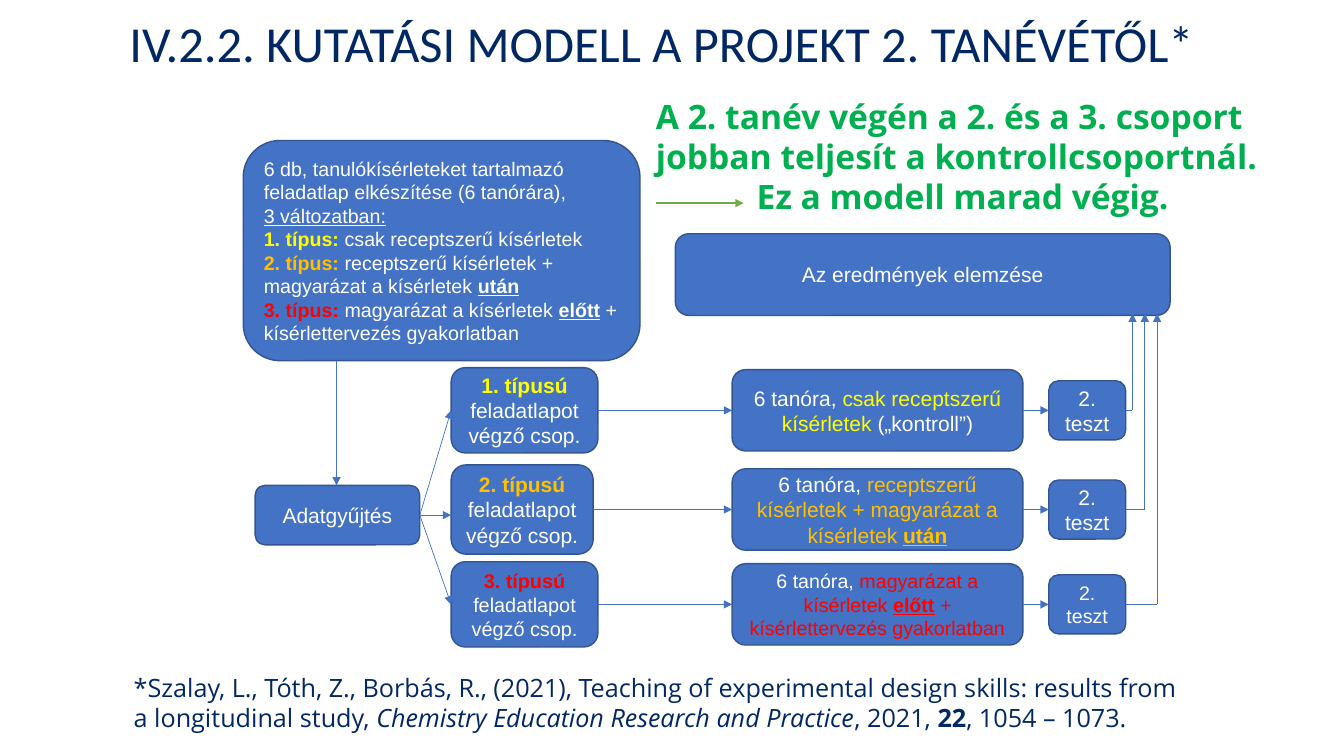
from pptx import Presentation
from pptx.dml.color import RGBColor
from pptx.enum.shapes import MSO_CONNECTOR, MSO_SHAPE
from pptx.enum.text import MSO_ANCHOR, PP_ALIGN
from pptx.oxml.ns import qn
from pptx.util import Cm, Pt
from lxml.etree import SubElement

BLUE, OUTLINE, NAVY, WHITE = "4472C4", "325491", "012863", "FFFFFF"
YELLOW, ORANGE, RED, GREEN = "FFFF00", "FFC000", "FF0000", "00B050"
BOLD = {"bold": True}
STRESSED = {"bold": True, "underline": True}


def rgb(value):
    return RGBColor.from_string(value)


def write(shape, paragraphs, size, color=WHITE, font="Arial",
          align=PP_ALIGN.LEFT, anchor=MSO_ANCHOR.MIDDLE, bold=False):
    """Each paragraph is a list of (text, format changes) pairs."""
    frame = shape.text_frame
    frame.word_wrap = True
    frame.vertical_anchor = anchor
    for i, pieces in enumerate(paragraphs):
        paragraph = frame.add_paragraph() if i else frame.paragraphs[0]
        paragraph.alignment = align
        for text, changes in pieces:
            run = paragraph.add_run()
            run.text = text
            look = run.font
            look.name, look.size = font, Pt(size)
            look.bold = changes.get("bold", bold)
            look.italic = changes.get("italic", False)
            look.underline = changes.get("underline", False)
            look.color.rgb = rgb(changes.get("color", color))


def add_box(slide, box, paragraphs, size=15, align=PP_ALIGN.CENTER):
    shape = slide.shapes.add_shape(MSO_SHAPE.ROUNDED_RECTANGLE, *map(Cm, box))
    shape.shadow.inherit = False
    shape.fill.solid()
    shape.fill.fore_color.rgb = rgb(BLUE)
    shape.line.color.rgb = rgb(OUTLINE)
    shape.line.width = Pt(1)
    write(shape, paragraphs, size, align=align)


def add_label(slide, box, paragraphs, size, **look):
    label = slide.shapes.add_textbox(*map(Cm, box))
    write(label, paragraphs, size, anchor=MSO_ANCHOR.TOP, **look)
    return label


def add_line(slide, start, end, color=BLUE, width=0.5, arrow=True):
    line = slide.shapes.add_connector(
        MSO_CONNECTOR.STRAIGHT, *map(Cm, (*start, *end)))
    line.line.color.rgb = rgb(color)
    line.line.width = Pt(width)
    if arrow:
        SubElement(line.line._get_or_add_ln(), qn("a:tailEnd"), type="triangle")
    SubElement(line._element.spPr, qn("a:effectLst"))


def add_preparation(slide, box):
    """Worksheet design on top, data collection below; returns the way out."""
    left, top, width, height = box
    design_height, collect_height = 5.55, 1.5
    collect_top = top + height - collect_height
    add_box(slide, (left, top, width, design_height), [
        [("6 db, tanulókísérleteket tartalmazó feladatlap elkészítése "
          "(6 tanórára),", {})],
        [("3 változatban:", {"underline": True})],
        [("1. típus: ", {"color": YELLOW, **BOLD}),
         ("csak receptszerű kísérletek", {})],
        [("2. típus: ", {"color": ORANGE, **BOLD}),
         ("receptszerű kísérletek + magyarázat a kísérletek ", {}),
         ("után", STRESSED)],
        [("3. típus: ", {"color": RED, **BOLD}),
         ("magyarázat a kísérletek ", {}), ("előtt", STRESSED),
         (" + kísérlettervezés gyakorlatban", {})],
    ], 14, PP_ALIGN.LEFT)
    add_box(slide, (left + 0.3, collect_top, 4.15, collect_height),
            [[("Adatgyűjtés", {})]])
    add_line(slide, (left + 2.35, top + design_height),
             (left + 2.35, collect_top))
    return left + 4.45, top + height - collect_height / 2


def add_group_row(slide, box, source, result, number, color, lessons,
                  group_size, group_width, lesson_size):
    """Group, lessons and test, joined from the source to the result."""
    left, top, width, height = box
    middle = top + height / 2
    lessons_left, lessons_width, lessons_height = left + 7.08, 7.33, 2.05
    test_width, test_height = 1.94, 1.49
    right = left + width
    test_left = right - test_width

    add_box(slide, (left, top, group_width, height),
            [[(f"{number}. típusú ", {"color": color, **BOLD}),
              ("feladatlapot végző csop.", {})]], group_size)
    add_box(slide, (lessons_left, middle - lessons_height / 2,
                    lessons_width, lessons_height),
            [[("6 tanóra, ", {}), *lessons]], lesson_size)
    add_box(slide, (test_left, middle - test_height / 2,
                    test_width, test_height),
            [[("2. teszt", {})]], lesson_size)

    # The arrow from the source runs level where the group lies beside it
    beside = top < source[1] < top + height
    add_line(slide, source, (left, source[1] if beside else middle))
    add_line(slide, (left + group_width, middle), (lessons_left, middle))
    add_line(slide, (lessons_left + lessons_width, middle),
             (test_left, middle))
    add_line(slide, (right, middle), (result[0], middle), arrow=False)
    add_line(slide, (result[0], middle), result)


def add_conclusion(slide, box):
    left, top, width, height = box
    conclusion = add_label(slide, box, [
        [("A 2. tanév végén a 2. és a 3. csoport jobban teljesít "
          "a kontrollcsoportnál.", {})],
        [("\tEz a modell marad végig.", {})],
    ], 24, color=GREEN, font="Open Sans", bold=True)
    # Tab stop that leaves room for the arrow
    last_line = conclusion.text_frame.paragraphs[-1]._p.get_or_add_pPr()
    stops = SubElement(last_line, qn("a:tabLst"))
    SubElement(stops, qn("a:tab"), pos=str(int(Cm(2.54))), algn="l")
    arrow_y = top + 2.84
    add_line(slide, (left + 0.25, arrow_y), (left + 2.46, arrow_y),
             "70AD47", 1.5)


def add_source_note(slide, box):
    add_label(slide, box, [[
        ("*Szalay, L., Tóth, Z., Borbás, R., (2021), Teaching of experimental "
         "design skills: results from a longitudinal study, ", {}),
        ("Chemistry Education Research and Practice", {"italic": True}),
        (", 2021, ", {}), ("22", BOLD), (", 1054 – 1073.", {}),
    ]], 18, color=NAVY, font="Open Sans")


def main():
    deck = Presentation()
    deck.slide_width, deck.slide_height = Cm(33.87), Cm(19.05)
    slide = deck.slides.add_slide(deck.slide_layouts[6])

    # Title
    add_label(slide, (1.07, 0.18, 31.22, 1.8),
              [[("IV.2.2. KUTATÁSI MODELL A PROJEKT 2. TANÉVÉTŐL*", {})]],
              36, color=NAVY, font="Calibri", align=PP_ALIGN.CENTER)

    # Start and end of the research model
    source = add_preparation(slide, (6.13, 3.54, 10, 10.19))
    add_box(slide, (17.02, 5.89, 12.47, 2.06),
            [[("Az eredmények elemzése", {})]])

    # One row per group: number, colour, lessons, sizes, middle, height
    rows = [
        (1, YELLOW, [("csak receptszerű kísérletek ", {"color": YELLOW}),
                     ("(„kontroll”)", {})], 15, 3.7, 15, 10.34, 2.15),
        (2, ORANGE, [("receptszerű kísérletek + magyarázat a kísérletek ",
                      {"color": ORANGE}),
                     ("után", {"color": ORANGE, **STRESSED})],
         15, 3.58, 15, 12.84, 2.25),
        (3, RED, [("magyarázat a kísérletek ", {"color": RED}),
                  ("előtt", {"color": RED, **STRESSED}),
                  (" + kísérlettervezés gyakorlatban", {"color": RED})],
         14.2, 3.7, 14, 15.23, 2.15),
    ]
    for i, (*content, middle, height) in enumerate(rows):
        add_group_row(slide, (11.37, middle - height / 2, 17, height),
                      source, (28.54 + 0.31 * i, 7.9), *content)

    # Conclusion and reference
    add_conclusion(slide, (16.28, 2.28, 17.02, 3.33))
    add_source_note(slide, (3.12, 16.81, 26.82, 1.8))

    deck.save("out.pptx")


if __name__ == "__main__":
    main()
